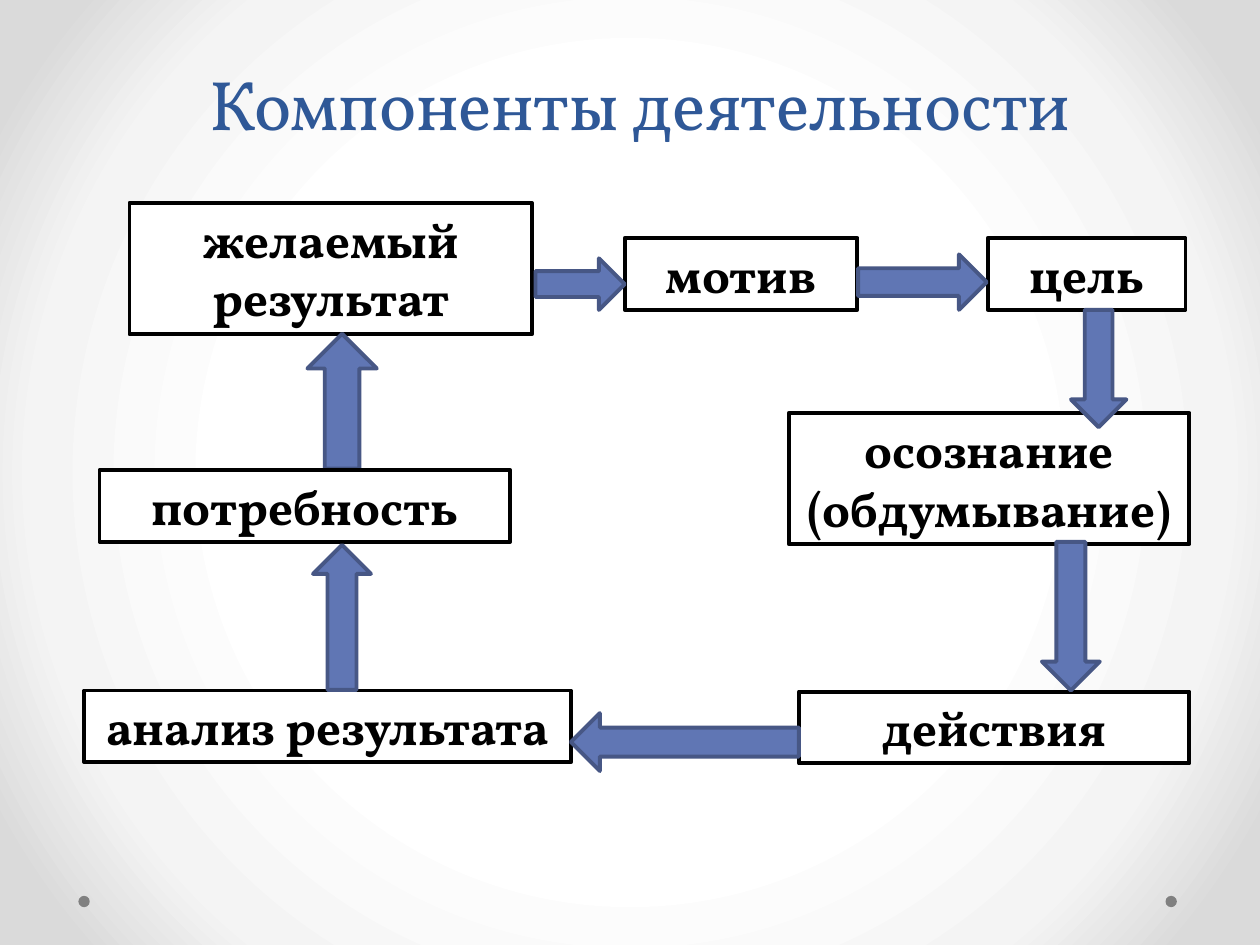
from pptx import Presentation
from pptx.dml.color import RGBColor
from pptx.enum.shapes import MSO_SHAPE
from pptx.enum.text import MSO_ANCHOR, MSO_AUTO_SIZE, PP_ALIGN
from pptx.oxml import parse_xml
from pptx.oxml.ns import nsdecls, qn
from pptx.util import Pt

FONT = "Vollkorn"
RECT = MSO_SHAPE.RECTANGLE
RIGHT, DOWN = MSO_SHAPE.RIGHT_ARROW, MSO_SHAPE.DOWN_ARROW
LEFT, UP = MSO_SHAPE.LEFT_ARROW, MSO_SHAPE.UP_ARROW

# Back to front: shape, text, (left, top, width, height) inside the cycle's box
CYCLE = [
    (RECT, "цель", (516.5, 20, 113, 41)),
    (RECT, "мотив", (309, 20, 133, 41)),
    (RECT, "действия", (408.5, 279.3, 223.2, 41)),
    (RECT, "осознание (обдумывание)", (402.7, 120, 229, 75)),
    (RECT, "желаемый результат", (26, 0, 230, 75)),
    (RIGHT, None, (258, 31.6, 51, 29.5)),
    (RIGHT, None, (442.3, 29.4, 73.5, 31.7)),
    (DOWN, None, (564, 61.1, 31.7, 67)),
    (DOWN, None, (547.4, 193.6, 33.1, 85)),
    (UP, None, (127.7, 74.8, 39.6, 77)),
    (RECT, "потребность", (8.9, 152.6, 234.7, 41)),
    (RECT, "анализ результата", (0.2, 278.6, 278, 41)),
    (UP, None, (130.9, 195.4, 33.1, 82.8)),
    (LEFT, None, (278.2, 291.5, 130.3, 33.1)),
]


def rgb(color):
    return RGBColor.from_string(color)


def add_run(p, text, size, color, bold=False):
    r = p.add_run()
    r.text = text
    r.font.name = FONT
    r.font.size = Pt(size)
    r.font.bold = bold
    r.font.color.rgb = rgb(color)


def add_filled(s, kind, box, fill, line=None):
    """Add a preset shape without shadow; no line colour means no outline."""
    sp = s.shapes.add_shape(kind, *map(Pt, box))
    sp.shadow.inherit = False
    sp.fill.solid()
    sp.fill.fore_color.rgb = rgb(fill)
    if line:
        sp.line.color.rgb = rgb(line)
        sp.line.width = Pt(2.25)
    else:
        sp.line.fill.background()
    return sp


def set_background(s):
    """Radial gradient, white in the middle and grey in the corners."""
    s.background.fill.gradient()
    grad = next(s.element.iter(qn("a:gradFill")))
    stops = "".join(
        f'<a:gs pos="{pos}000"><a:srgbClr val="{color}"/></a:gs>'
        for pos, color in [(50, "FFFFFF"), (76, "F4F4F4"), (92, "DADADA")])
    grad.getparent().replace(grad, parse_xml(
        f'<a:gradFill {nsdecls("a")} rotWithShape="1"><a:gsLst>{stops}</a:gsLst>'
        '<a:path path="circle"><a:fillToRect l="50000" t="50000" r="50000" b="50000"/>'
        '</a:path></a:gradFill>'))


def add_corner_dots(s, left, top, width, size):
    for x in (left, left + width - size):
        add_filled(s, MSO_SHAPE.OVAL, (x, top, size, size), "808080")


def add_title(s, left, top, width, height):
    sp = s.shapes.title
    sp.left, sp.top, sp.width, sp.height = map(Pt, (left, top, width, height))
    tf = sp.text_frame
    tf.word_wrap = True
    tf.auto_size = MSO_AUTO_SIZE.NONE
    tf.vertical_anchor = MSO_ANCHOR.BOTTOM
    p = tf.paragraphs[0]
    p.alignment = PP_ALIGN.CENTER
    p.line_spacing = Pt(58)
    add_run(p, "Компоненты деятельности", 40, "2F5897")


def add_cycle(s, left, top):
    for kind, text, (x, y, w, h) in CYCLE:
        box = (left + x, top + y, w, h)
        if text is None:
            add_filled(s, kind, box, "6076B4", "475785")
            continue
        tf = add_filled(s, kind, box, "FFFFFF", "000000").text_frame
        tf.word_wrap = True
        tf.auto_size = MSO_AUTO_SIZE.SHAPE_TO_FIT_TEXT
        tf.vertical_anchor = MSO_ANCHOR.TOP
        p = tf.paragraphs[0]
        p.alignment = PP_ALIGN.CENTER
        add_run(p, text, 28, "000000", bold=True)


def main():
    prs = Presentation()
    prs.slide_width, prs.slide_height = Pt(720), Pt(540)
    s = prs.slides.add_slide(prs.slide_layouts[5])
    set_background(s)
    add_corner_dots(s, 44.8, 511.9, 627.7, 6.5)
    add_title(s, 41.8, 31.7, 648, 54.7)
    add_cycle(s, 48, 116)
    prs.save("out.pptx")


if __name__ == "__main__":
    main()
